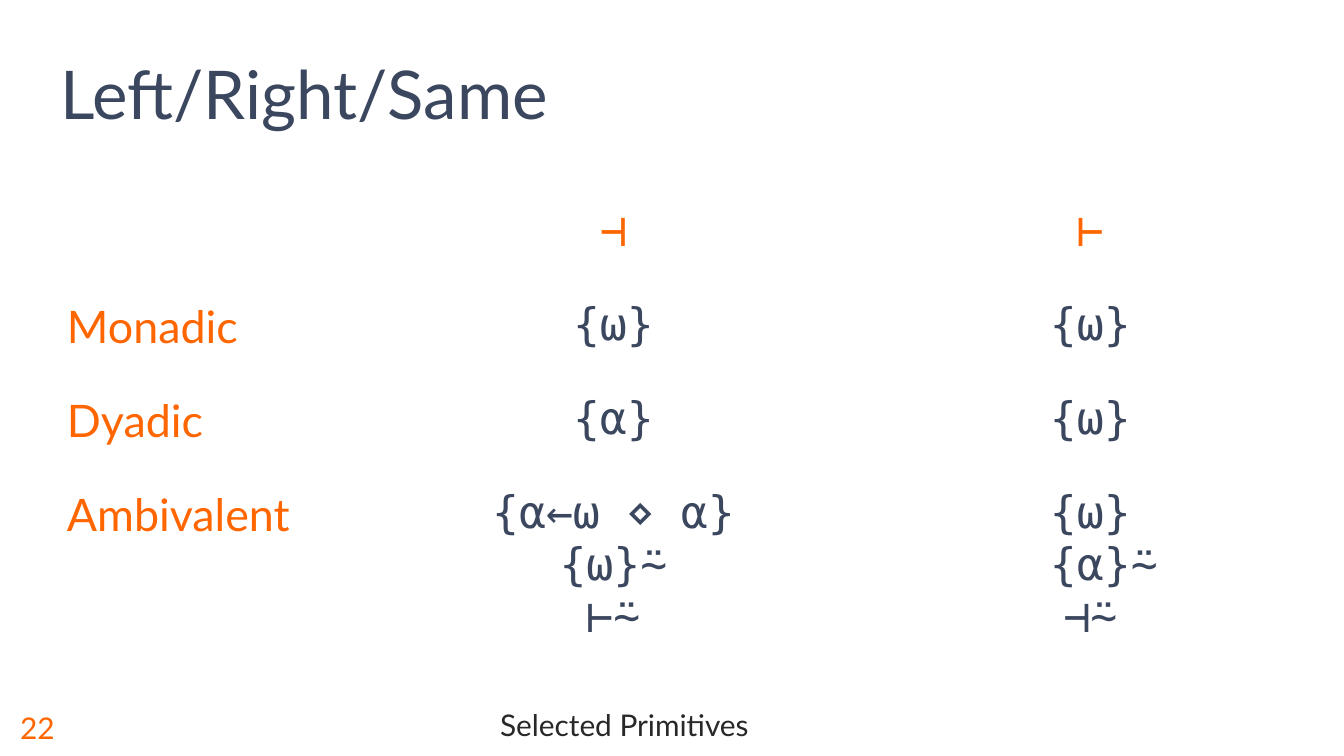
from typing import NamedTuple

from lxml.etree import SubElement
from pptx import Presentation
from pptx.dml.color import RGBColor
from pptx.enum.text import MSO_ANCHOR as Anchor, PP_ALIGN as Align
from pptx.oxml.ns import qn
from pptx.slide import Slide
from pptx.text.text import TextFrame
from pptx.util import Emu, Pt

EMU_PER_PX = 6804
COLORS = {"ink": "3B475E", "accent": "FF6600", "footer": "282828"}
SANS, MONO = "Lato", "DejaVu Sans Mono"


class Box(NamedTuple):
    left: int
    top: int
    width: int
    height: int


class Row(NamedTuple):
    label: str
    left_tack: str
    right_tack: str
    height: int


COLUMN_WIDTHS = (300, 533, 421)
CELL_MARGIN = 20
ROWS = (
    Row("", "⊣", "⊢", 94),
    Row("Monadic", "{⍵}", "{⍵}", 94),
    Row("Dyadic", "{⍺}", "{⍵}", 94),
    Row("Ambivalent", "{⍺←⍵ ⋄ ⍺}\n{⍵}⍨\n⊢⍨", "{⍵}\n {⍺}⍨\n⊣⍨", 200),
)


def px(length: int) -> Emu:
    return Emu(length * EMU_PER_PX)


def write(frame: TextFrame, text: str, *, size: int = 24, font: str = SANS,
          color: str = "ink", align: Align = Align.LEFT, spacing: float = 1.0) -> None:
    """Fill the frame with one paragraph per line of text."""
    for index, line in enumerate(text.split("\n")):
        paragraph = frame.paragraphs[0] if index == 0 else frame.add_paragraph()
        paragraph.alignment = align
        paragraph.line_spacing = spacing
        run = paragraph.add_run()
        run.text = line
        run.font.size = Pt(size)
        run.font.color.rgb = RGBColor.from_string(COLORS[color])
        run.font.name = font
        for script in ("a:ea", "a:cs"):  # APL symbols may count as either script
            SubElement(run.font._element, qn(script), typeface=font)


def add_label(slide: Slide, box: Box, text: str, anchor: Anchor, **text_format) -> None:
    frame = slide.shapes.add_textbox(*map(px, box)).text_frame
    frame.word_wrap = True
    frame.vertical_anchor = anchor
    write(frame, text, **text_format)


def add_primitives_table(slide: Slide, left: int, top: int) -> None:
    box = Box(left, top, sum(COLUMN_WIDTHS), sum(row.height for row in ROWS))
    table = slide.shapes.add_table(len(ROWS), len(COLUMN_WIDTHS), *map(px, box)).table
    table.first_row = table.horz_banding = False
    for column, width in zip(table.columns, COLUMN_WIDTHS):
        column.width = px(width)
    for r, row in enumerate(ROWS):
        table.rows[r].height = px(row.height)
        for c, text in enumerate((row.label, row.left_tack, row.right_tack)):
            cell = table.cell(r, c)
            cell.fill.background()
            cell.margin_left = cell.margin_right = px(CELL_MARGIN)
            cell.margin_top = cell.margin_bottom = px(CELL_MARGIN)
            if text:
                write(cell.text_frame, text,
                      font=MONO if c else SANS,
                      color="ink" if r and c else "accent",
                      align=Align.CENTER if c else Align.LEFT)


def main() -> None:
    deck = Presentation()
    deck.slide_width, deck.slide_height = px(1344), px(756)
    slide = deck.slides.add_slide(deck.slide_layouts[6])
    add_label(slide, Box(105, 698, 1039, 59), "Selected Primitives", Anchor.MIDDLE,
              size=16, color="footer", align=Align.CENTER, spacing=0.8)
    add_label(slide, Box(7, 698, 98, 59), "22", Anchor.MIDDLE, size=16, color="accent")
    add_primitives_table(slide, 47, 185)
    add_label(slide, Box(47, 39, 1254, 101), "Left/Right/Same", Anchor.BOTTOM, size=36)
    deck.save("out.pptx")


if __name__ == "__main__":
    main()
